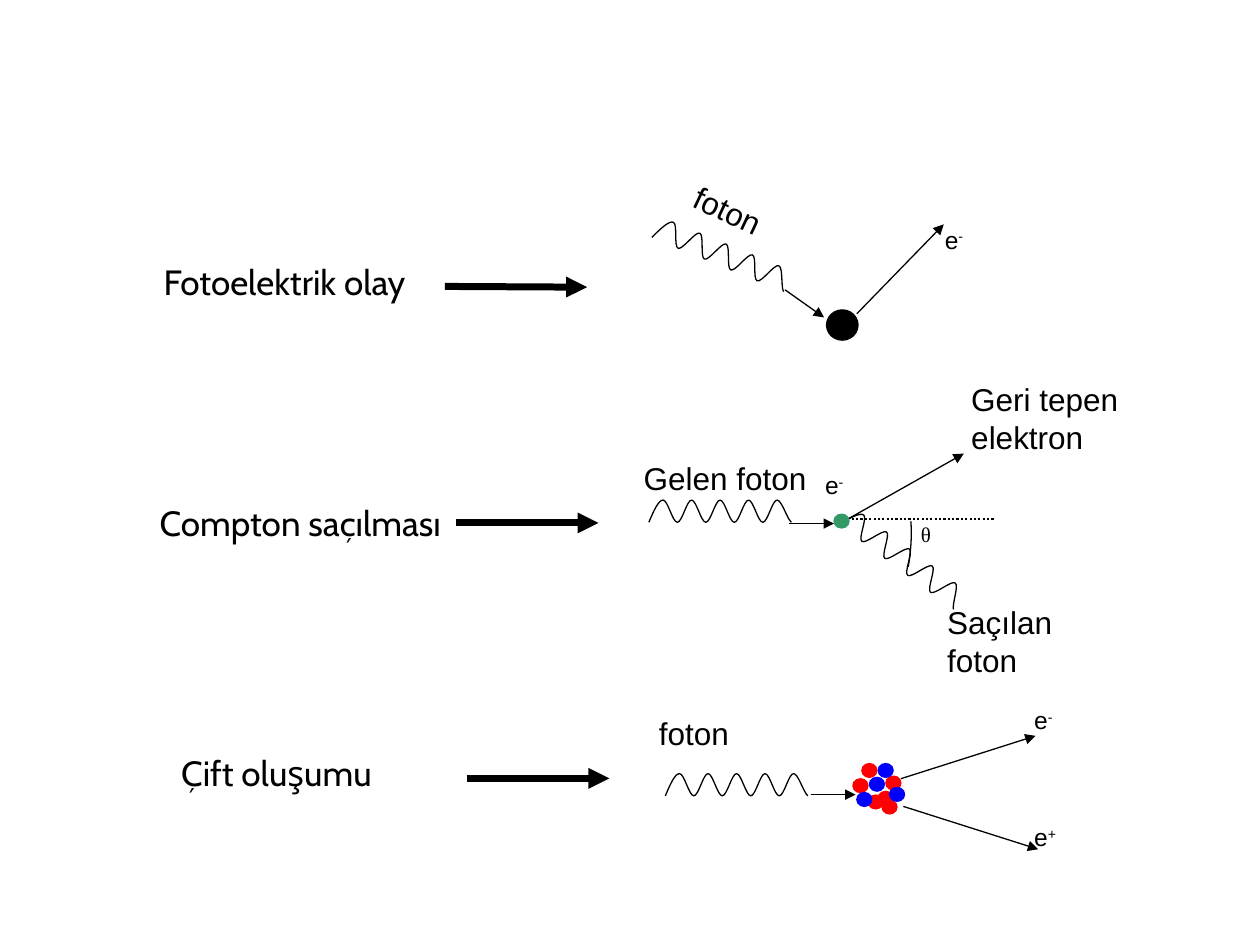
from dataclasses import dataclass

from lxml import etree
from pptx import Presentation
from pptx.dml.color import RGBColor
from pptx.enum.dml import MSO_LINE
from pptx.enum.shapes import MSO_CONNECTOR, MSO_SHAPE
from pptx.enum.text import MSO_AUTO_SIZE
from pptx.oxml.ns import qn
from pptx.util import Pt

BLACK = RGBColor(0x00, 0x00, 0x00)
RED = RGBColor(0xFF, 0x00, 0x00)
BLUE = RGBColor(0x00, 0x00, 0xFF)
GREEN = RGBColor(0x33, 0x99, 0x66)
THIN, DOTTED, THICK = 0.75, 1.25, 4
WAVE_WIDTH, WAVE_HEIGHT, WAVE_CRESTS = 81.4, 12.7, 5
PARTICLE_SIZE = (8.6, 7.9)


@dataclass(frozen=True)
class Line:
    start: tuple[float, float]
    end: tuple[float, float]
    width: float = THIN
    arrow: bool = True


@dataclass(frozen=True)
class Box:
    left: float
    top: float
    width: float = WAVE_WIDTH
    height: float = WAVE_HEIGHT
    rotation: float = 0


@dataclass(frozen=True)
class Particle:
    left: float
    top: float
    color: RGBColor
    size: tuple[float, float] = PARTICLE_SIZE


@dataclass(frozen=True)
class Label:
    text: str
    left: float
    top: float
    width: float
    height: float
    rotation: float = 0


LINES = [
    Line((254.2, 163.7), (335.5, 164.1), THICK),
    Line((260.6, 298.8), (342, 298.8), THICK),
    Line((266.7, 444.8), (348.2, 444.8), THICK),
    Line((448.6, 165.6), (470.9, 181.4)),
    Line((489.6, 179.3), (539.3, 128.2)),
    Line((450.7, 299.2), (476.6, 299.2)),
    Line((483.1, 297.4), (550.8, 259.2)),
    Line((486.7, 296.6), (568.1, 296.6), DOTTED, arrow=False),
    Line((463.7, 454.1), (488.9, 454.1)),
    Line((514.8, 445), (591.8, 420.5)),
    Line((516.2, 460.8), (593.3, 485.3)),
]
WAVES = [
    Box(371.8, 139, rotation=22.4),
    Box(370.8, 285.8),
    Box(475.2, 312.5, rotation=36.6),
    Box(380.2, 442.1),
]
ANGLE_BOX = Box(418.3, 277.2, 105.8, 48.2, 25.3)
ANGLE_START = (96.1, 0)
ANGLE_CURVE = [(100.4, 7.6), (103.5, 15.8), (105.8, 24.1)]
ANGLE_CENTER = (0, 48.2)
PROTONS = [(506.2, 443.5), (492.5, 436.3), (501.8, 452.2),
           (496.1, 454.3), (487.4, 445), (504, 457.2)]
NEUTRONS = [(501.8, 436.3), (508.3, 450), (496.8, 444.2), (489.6, 452.9)]
PARTICLES = [
    Particle(472.3, 177.1, BLACK, (18, 17.3)),
    Particle(476.6, 293.8, GREEN),
    *(Particle(left, top, RED) for left, top in PROTONS),
    *(Particle(left, top, BLUE) for left, top in NEUTRONS),
]
EFFECTS = [
    Label("Fotoelektrik olay", 86.4, 145.4, 162.7, 38.2),
    Label("Compton saçılması", 84.2, 283, 180, 38.2),
    Label("Çift oluşumu", 96.5, 425.9, 162.7, 38.2),
]
PHOTON_LABELS = [
    Label("foton", 388.8, 105.8, 54.7, 28.8, 25.2),
    Label("Gelen foton", 360.7, 258.5, 108.7, 28.8),
    Label("Geri tepen\nelektron", 547.9, 213.8, 104.4, 51.1),
    Label("Saçılan\nfoton", 534.2, 341.3, 79.9, 51.1),
    Label("foton", 369.4, 404.6, 54.7, 28.8),
]
CHARGES = [
    Label("-", 532.8, 124.9, 38.2, 34.6),
    Label("-", 464.4, 265, 38.2, 34.6),
    Label("-", 583.9, 399.3, 38.2, 34.6),
    Label("+", 583.9, 466.3, 41.8, 34.6),
]
THETA = Label("θ", 519.1, 294.5, 41, 38.2)


def add_curve(slide, box: Box, paths):
    """Add an unfilled outline; each path pairs its attributes with its drawing steps."""
    left, top, right, bottom = map(
        Pt, (box.left, box.top, box.left + box.width, box.top + box.height))
    builder = slide.shapes.build_freeform(left, top)
    builder.add_line_segments([(right, top), (right, bottom), (left, bottom)])
    shape = builder.convert_to_shape()
    shape.rotation = box.rotation
    shape.shadow.inherit = False
    shape.fill.background()
    shape.line.color.rgb = BLACK
    shape.line.width = Pt(THIN)
    path_list = next(shape._element.iter(qn("a:pathLst")))
    path_list.clear()
    for attributes, steps in paths:
        path = etree.SubElement(path_list, qn("a:path"), w=str(Pt(box.width)),
                                h=str(Pt(box.height)), **attributes)
        for name, points in steps:
            step = etree.SubElement(path, qn(f"a:{name}"))
            for x, y in points:
                etree.SubElement(step, qn("a:pt"), x=str(Pt(x)), y=str(Pt(y)))


def add_wave(slide, box: Box):
    """Draw crests and troughs, with steeper slopes at both ends."""
    halves = 2 * WAVE_CRESTS
    width = box.width / halves
    steps = [("moveTo", [(0, box.height)])]
    for half in range(halves):
        levels = (0, 0, 0) if half % 2 == 0 else (0, 1, 1)
        if half % 2 == 0:
            levels = (0.5 if half == 0 else 1, 0, 0)
        elif half == halves - 1:
            levels = (0, 0.8, 1)
        steps.append(("cubicBezTo", [((half + i / 3) * width, box.height * level)
                                     for i, level in enumerate(levels, 1)]))
    add_curve(slide, box, [({}, steps)])


def add_angle(slide):
    """Draw the arc of the scattering angle over its unstroked sector."""
    arc = [("moveTo", [ANGLE_START]), ("cubicBezTo", ANGLE_CURVE)]
    sector = [*arc, ("lnTo", [ANGLE_CENTER]), ("lnTo", [ANGLE_START]), ("close", [])]
    add_curve(slide, ANGLE_BOX, [({"fill": "none"}, arc), ({"stroke": "0"}, sector)])


def add_line(slide, line: Line):
    connector = slide.shapes.add_connector(
        MSO_CONNECTOR.STRAIGHT, *map(Pt, line.start + line.end))
    connector.line.color.rgb = BLACK
    connector.line.width = Pt(line.width)
    if line.arrow:
        etree.SubElement(connector.line._get_or_add_ln(), qn("a:tailEnd"), type="triangle")
    else:
        connector.line.dash_style = MSO_LINE.ROUND_DOT
    etree.SubElement(connector._element.spPr, qn("a:effectLst"))


def add_particle(slide, particle: Particle):
    shape = slide.shapes.add_shape(
        MSO_SHAPE.OVAL, *map(Pt, (particle.left, particle.top, *particle.size)))
    shape.shadow.inherit = False
    shape.fill.solid()
    shape.fill.fore_color.rgb = particle.color
    shape.line.color.rgb = particle.color
    shape.line.width = Pt(THIN)


def add_text(slide, label: Label, *, size, font="Arial", wrap=False, prefix=""):
    """Add a label; after a prefix, its text is raised."""
    shape = slide.shapes.add_textbox(
        *map(Pt, (label.left, label.top, label.width, label.height)))
    shape.rotation = label.rotation
    frame = shape.text_frame
    frame.word_wrap = wrap
    frame.auto_size = MSO_AUTO_SIZE.NONE if wrap else MSO_AUTO_SIZE.SHAPE_TO_FIT_TEXT
    for index, text in enumerate(label.text.split("\n")):
        paragraph = frame.add_paragraph() if index else frame.paragraphs[0]
        for part in filter(None, (prefix, text)):
            run = paragraph.add_run()
            run.text = part
            run.font.size = Pt(size)
            run.font.name = font
            run.font.color.rgb = BLACK
        if prefix:
            run.font._element.set("baseline", "30000")


def main():
    presentation = Presentation()
    presentation.slide_width, presentation.slide_height = Pt(720), Pt(540)
    slide = presentation.slides.add_slide(presentation.slide_layouts[6])
    for wave in WAVES:
        add_wave(slide, wave)
    add_angle(slide)
    for line in LINES:
        add_line(slide, line)
    for particle in PARTICLES:
        add_particle(slide, particle)
    for label in EFFECTS:
        add_text(slide, label, size=20, font="Cabin", wrap=True)
    for label in PHOTON_LABELS:
        add_text(slide, label, size=18)
    for label in CHARGES:
        add_text(slide, label, size=14, prefix="e")
    add_text(slide, THETA, size=12, font="Times New Roman", wrap=True)
    presentation.save("out.pptx")


if __name__ == "__main__":
    main()
